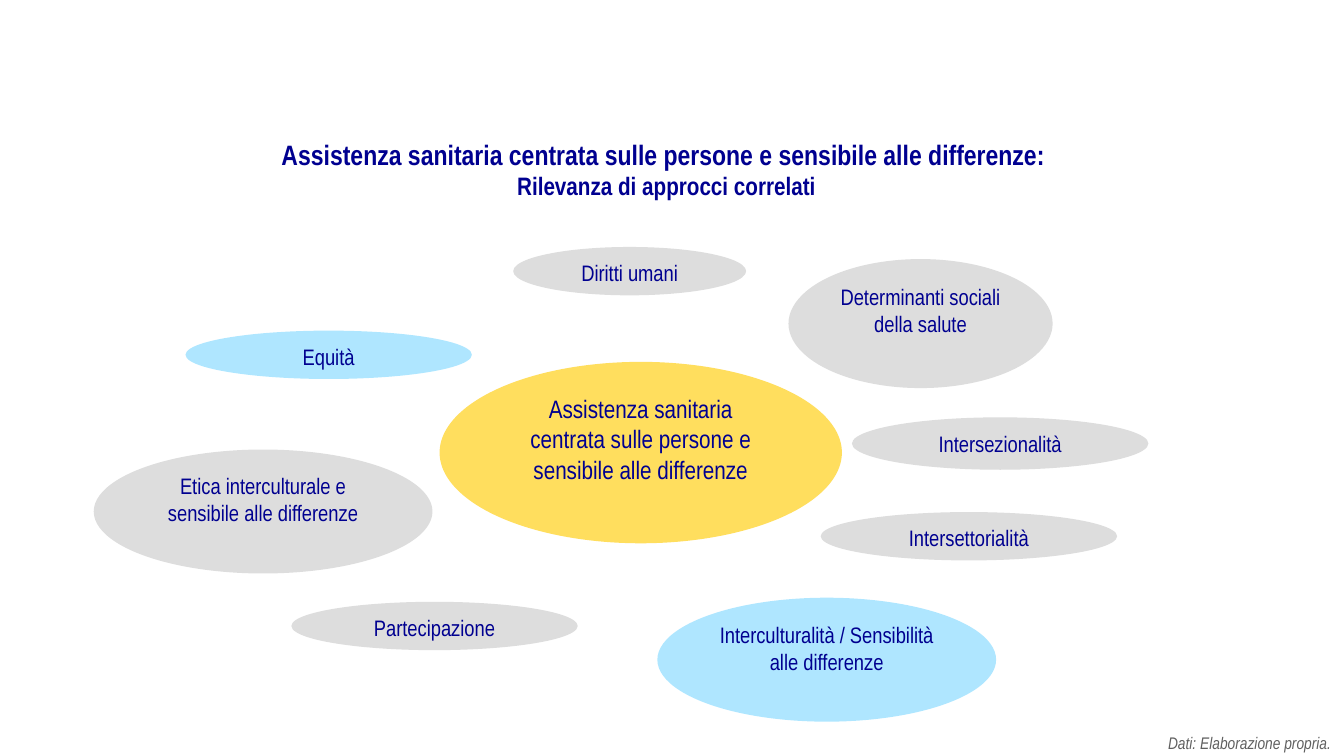
from dataclasses import dataclass

from lxml.etree import SubElement
from pptx import Presentation
from pptx.dml.color import RGBColor
from pptx.enum.shapes import MSO_SHAPE
from pptx.enum.text import MSO_ANCHOR, MSO_AUTO_SIZE, PP_ALIGN
from pptx.oxml.ns import qn
from pptx.util import Inches, Pt


@dataclass(frozen=True)
class Theme:
    font: str = "Arial Narrow"
    navy: str = "000090"
    source_gray: str = "606060"
    gray: tuple = ("DDDDDD", 100)
    blue: tuple = ("31C1FF", 39)
    yellow: tuple = ("FFCC00", 63)
    title: int = 20
    large: int = 18
    body: int = 16
    source: int = 12


class SlideBuilder:
    def __init__(self, prs, theme):
        self.theme = theme
        self.slide = prs.slides.add_slide(prs.slide_layouts[5])

    def set_text(self, sp, text, sizes, color, align=PP_ALIGN.CENTER, bold=False, italic=False):
        tf = sp.text_frame
        tf.text = text
        tf.word_wrap = True
        tf.auto_size = MSO_AUTO_SIZE.NONE
        tf.vertical_anchor = MSO_ANCHOR.TOP
        for p, size in zip(tf.paragraphs, sizes):
            p.alignment = align
            for r in p.runs:
                r.font.name = self.theme.font
                r.font.size = Pt(size)
                r.font.bold = bold
                r.font.italic = italic
                r.font.color.rgb = RGBColor.from_string(color)

    def title(self, text, left, top, width, height):
        sp = self.slide.shapes.title
        sp.left, sp.top = Inches(left), Inches(top)
        sp.width, sp.height = Inches(width), Inches(height)
        self.set_text(sp, text, (self.theme.title, self.theme.large), self.theme.navy, bold=True)

    def source(self, text, left, top, width, height):
        sp = self.slide.shapes.add_textbox(
            Inches(left), Inches(top), Inches(width), Inches(height))
        self.set_text(sp, text, (self.theme.source,), self.theme.source_gray,
                      PP_ALIGN.RIGHT, italic=True)

    def ellipse(self, text, left, top, width, height, fill, size):
        sp = self.slide.shapes.add_shape(
            MSO_SHAPE.OVAL, Inches(left), Inches(top), Inches(width), Inches(height))
        sp.shadow.inherit = False
        sp.line.fill.background()
        color, opacity = fill
        sp.fill.solid()
        sp.fill.fore_color.rgb = RGBColor.from_string(color)
        if opacity < 100:
            clr = sp.element.spPr.find(qn("a:solidFill")).find(qn("a:srgbClr"))
            SubElement(clr, qn("a:alpha")).set("val", str(opacity * 1000))
        self.set_text(sp, text, (size, size), self.theme.navy)


def main():
    prs = Presentation()
    prs.slide_width, prs.slide_height = Inches(13.33), Inches(7.5)
    theme = Theme()
    s = SlideBuilder(prs, theme)

    s.title("Assistenza sanitaria centrata sulle persone e sensibile alle differenze: \n"
            "Rilevanza di approcci correlati", 0.89, 1.31, 11.44, 0.73)
    s.source("Dati: Elaborazione propria. ", 9.61, 7.22, 3.73, 0.3)

    approaches = [
        ("Diritti umani", 5.09, 2.45, 2.31, 0.48, theme.gray),
        ("Determinanti sociali della salute", 7.82, 2.57, 2.62, 1.28, theme.gray),
        ("Equità", 1.84, 3.28, 2.84, 0.48, theme.blue),
        ("Partecipazione", 2.89, 5.97, 2.84, 0.48, theme.gray),
        ("Interculturalità / Sensibilità alle differenze", 6.52, 5.93, 3.36, 1.23, theme.blue),
        ("Etica interculturale e sensibile alle differenze", 0.93, 4.46, 3.36, 1.23, theme.gray),
        ("Intersezionalità", 8.45, 4.14, 2.94, 0.52, theme.gray),
        ("Intersettorialità", 8.14, 5.08, 2.94, 0.48, theme.gray),
    ]
    for approach in approaches:
        s.ellipse(*approach, theme.body)
    s.ellipse("Assistenza sanitaria\ncentrata sulle persone e sensibile alle differenze",
              4.36, 3.59, 3.99, 1.8, theme.yellow, theme.large)

    prs.save("out.pptx")


if __name__ == "__main__":
    main()
